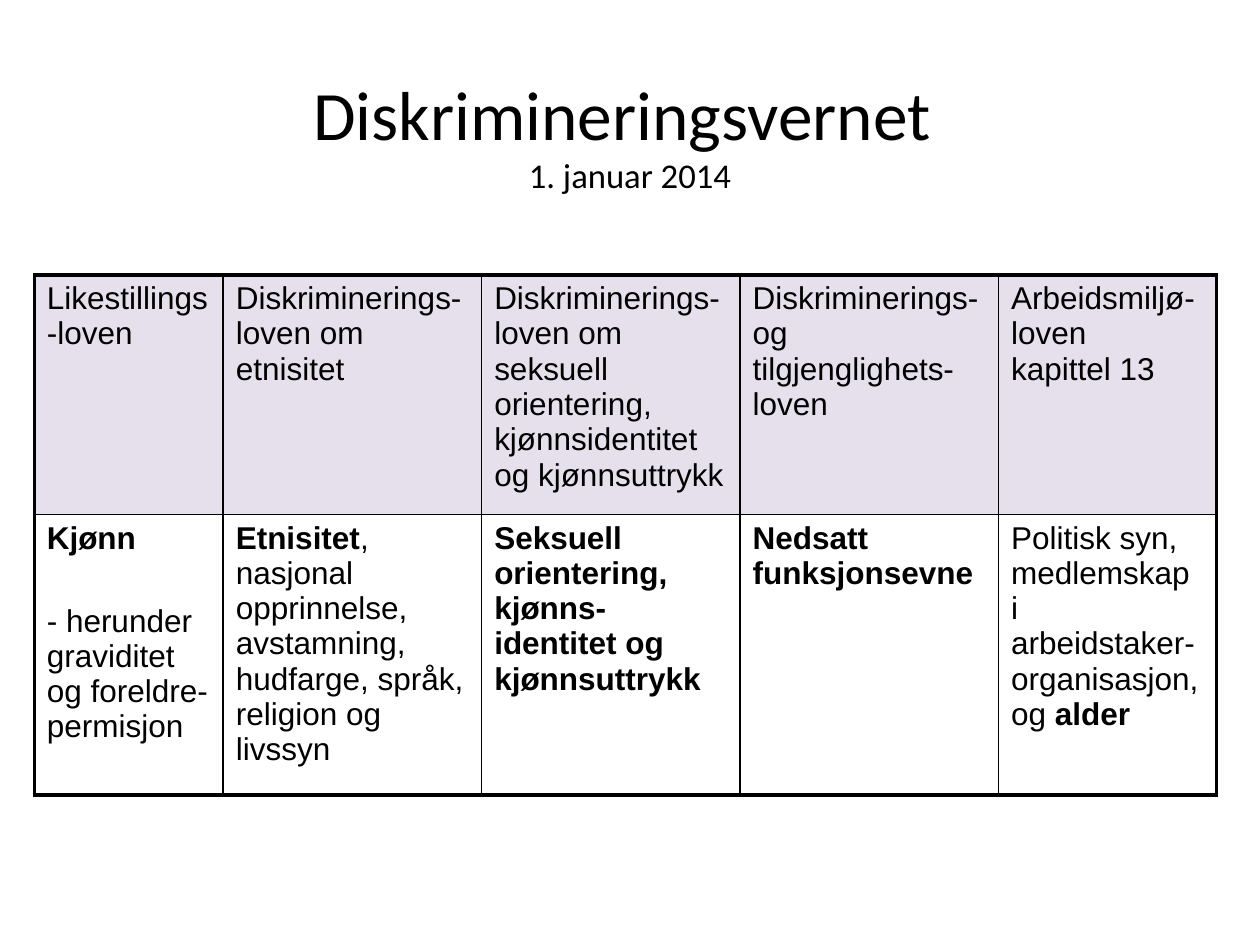
from dataclasses import dataclass

from lxml.etree import SubElement
from pptx import Presentation
from pptx.dml.color import RGBColor
from pptx.enum.text import MSO_ANCHOR, PP_ALIGN
from pptx.oxml.ns import qn
from pptx.util import Cm, Pt


@dataclass(frozen=True)
class Theme:
    ink: str = "000000"
    header_fill: str = "E6E0EC"
    title_font: str = "Calibri"
    table_font: str = "Arial"
    title_size: float = 39.6
    date_size: float = 19.8
    table_size: float = 18
    paragraph_gap: float = 27.3
    inner_line: float = 1
    outer_line: float = 2.25


THEME = Theme()
COLUMN_WIDTHS = (3.81, 5.21, 5.21, 5.21, 4.39)
ROW_HEIGHTS = (4.52, 5.66)

# A cell is a list of paragraphs; a paragraph is a list of (text, bold) runs.
LAWS = [
    [[("Likestillings-loven", False)]],
    [[("Diskriminerings-loven om etnisitet", False)]],
    [[("Diskriminerings-loven om seksuell orientering, "
       "kjønnsidentitet og kjønnsuttrykk", False)]],
    [[("Diskriminerings- og tilgjenglighets-loven", False)]],
    [[("Arbeidsmiljø-loven \nkapittel 13", False)]],
]
GROUNDS = [
    [[("Kjønn", True)],
     [("- herunder graviditet og foreldre-permisjon", False)]],
    [[("Etnisitet", True),
      (", nasjonal opprinnelse, avstamning, hudfarge, språk, "
       "religion og livssyn", False)]],
    [[("Seksuell orientering, kjønns-identitet og kjønnsuttrykk", True)]],
    [[("Nedsatt funksjonsevne", True)]],
    [[("Politisk syn, medlemskap i arbeidstaker-organisasjon, og ", False),
      ("alder", True)]],
]


def add_text(p, text, font, size, bold=False):
    """Add a run for each line of the text, with line breaks between."""
    for i, line in enumerate(text.split("\n")):
        if i:
            p.add_line_break()
        r = p.add_run()
        r.text = line
        r.font.name = font
        r.font.size = Pt(size)
        r.font.bold = bold
        r.font.color.rgb = RGBColor.from_string(THEME.ink)


def add_title(slide):
    sp = slide.shapes.add_textbox(Cm(1.9), Cm(1.52), Cm(21.6), Cm(2.34))
    tf = sp.text_frame
    tf.word_wrap = True
    tf.vertical_anchor = MSO_ANCHOR.MIDDLE
    p = tf.paragraphs[0]
    p.alignment = PP_ALIGN.CENTER
    add_text(p, "Diskrimineringsvernet \n", THEME.title_font, THEME.title_size)
    add_text(p, "1. januar 2014", THEME.title_font, THEME.date_size)


def set_borders(cell, outer_sides):
    """Draw all four borders, heavier on the outer sides of the table."""
    tc_pr = cell._tc.get_or_add_tcPr()
    for i, side in enumerate("LRTB"):
        width = THEME.outer_line if side in outer_sides else THEME.inner_line
        ln = SubElement(tc_pr, qn(f"a:ln{side}"), w=str(Pt(width)))
        fill = SubElement(ln, qn("a:solidFill"))
        SubElement(fill, qn("a:srgbClr"), val=THEME.ink)
        tc_pr.remove(ln)
        tc_pr.insert(i, ln)


def fill_cell(cell, paragraphs, is_header):
    if is_header:
        cell.fill.solid()
        cell.fill.fore_color.rgb = RGBColor.from_string(THEME.header_fill)
    else:
        cell.fill.background()
    tf = cell.text_frame
    for i, runs in enumerate(paragraphs):
        p = tf.add_paragraph() if i else tf.paragraphs[0]
        if i:
            p.space_before = Pt(THEME.paragraph_gap)
        for text, bold in runs:
            add_text(p, text, THEME.table_font, THEME.table_size, bold)


def add_law_table(slide):
    rows = (LAWS, GROUNDS)
    last_row, last_col = len(rows) - 1, len(COLUMN_WIDTHS) - 1
    frame = slide.shapes.add_table(
        len(rows), len(COLUMN_WIDTHS), Cm(0.69), Cm(5.54),
        Cm(sum(COLUMN_WIDTHS)), Cm(sum(ROW_HEIGHTS)))
    table = frame.table
    for column, width in zip(table.columns, COLUMN_WIDTHS):
        column.width = Cm(width)
    for row, height in zip(table.rows, ROW_HEIGHTS):
        row.height = Cm(height)
    for y, contents in enumerate(rows):
        for x, paragraphs in enumerate(contents):
            cell = table.cell(y, x)
            fill_cell(cell, paragraphs, is_header=y == 0)
            edges = {"L": x == 0, "R": x == last_col,
                     "T": y == 0, "B": y == last_row}
            set_borders(cell, [side for side, outer in edges.items() if outer])


def main():
    prs = Presentation()
    prs.slide_width, prs.slide_height = Cm(25.4), Cm(19.05)
    slide = prs.slides.add_slide(prs.slide_layouts[6])
    add_title(slide)
    add_law_table(slide)
    prs.save("out.pptx")


if __name__ == "__main__":
    main()
